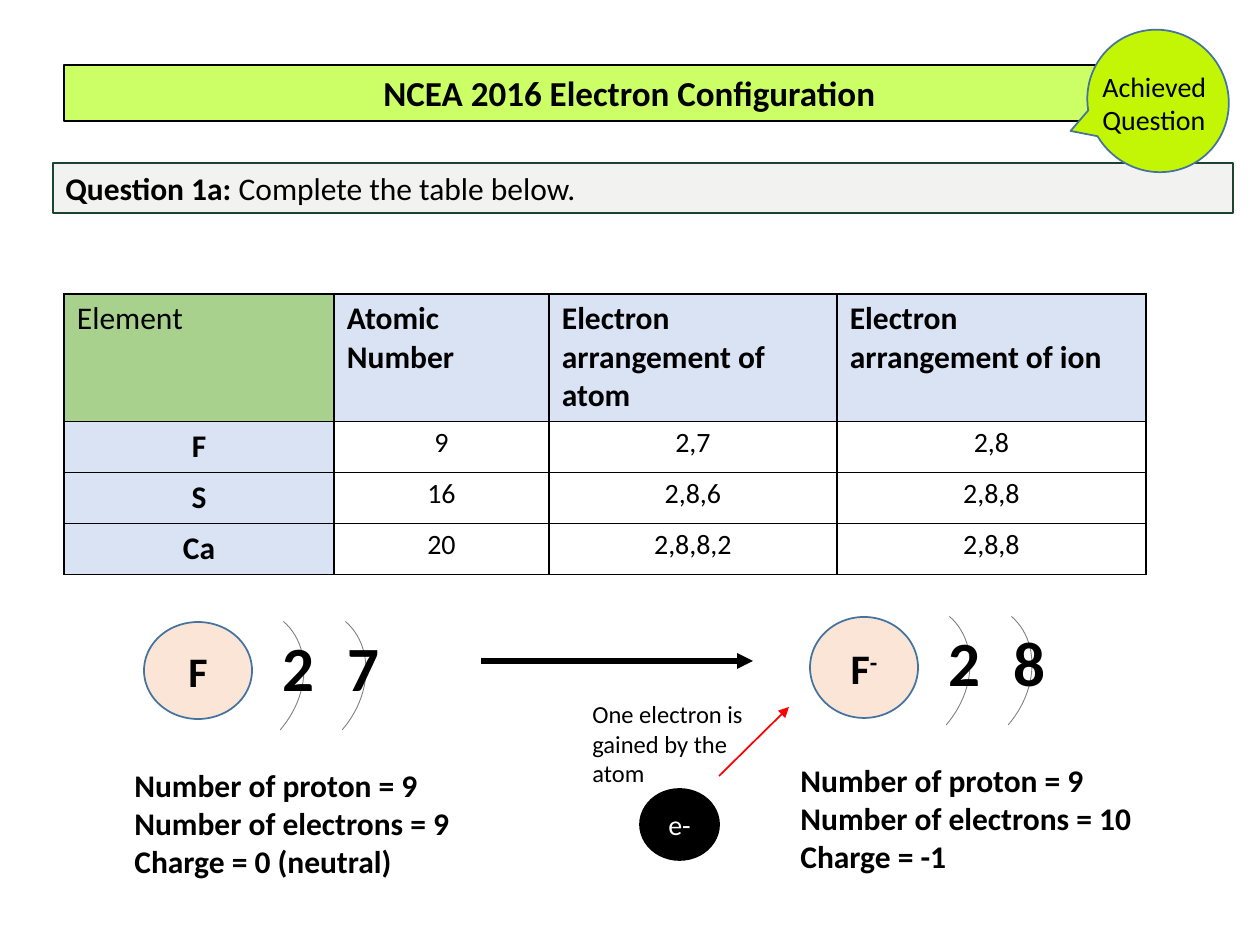
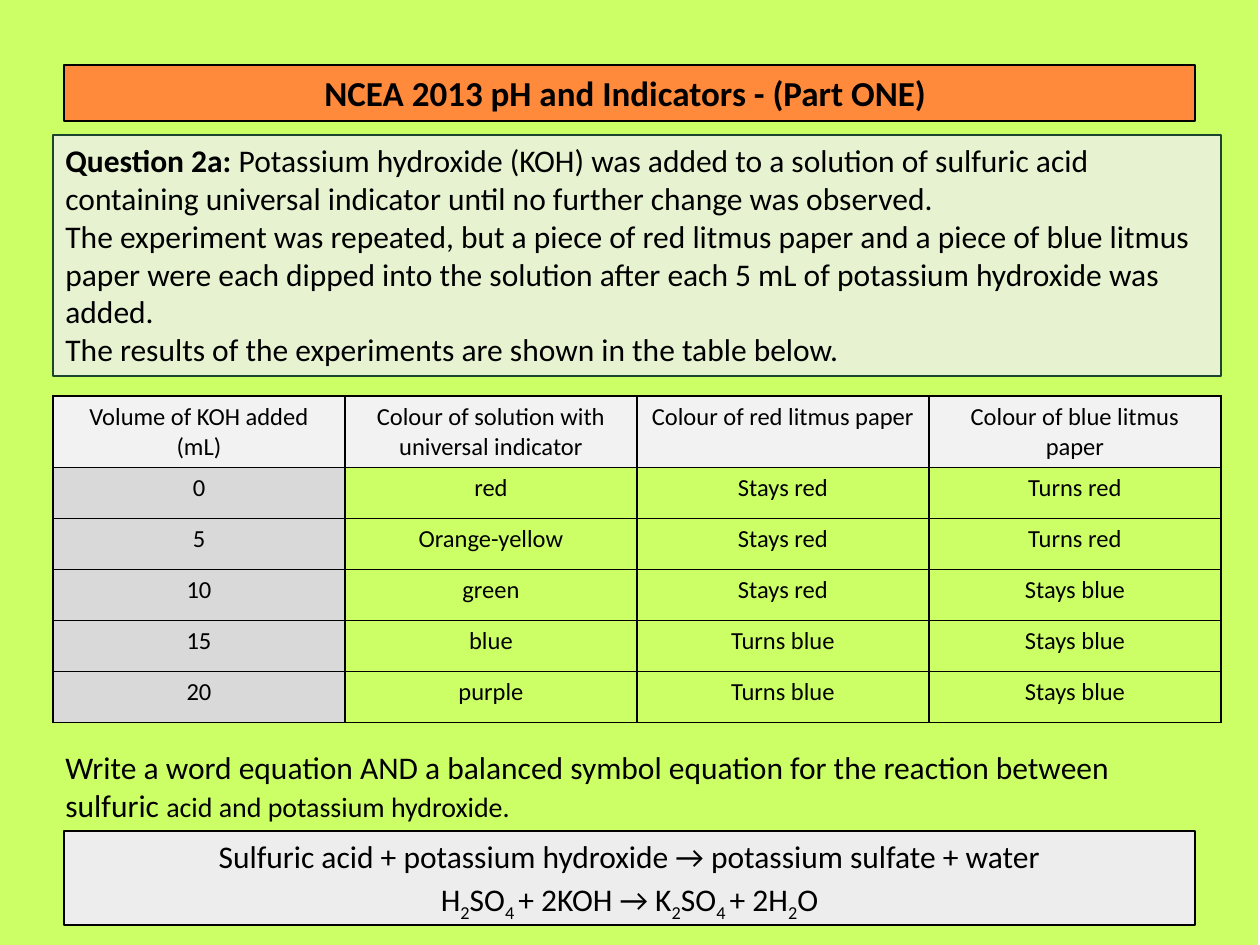
from pptx import Presentation
from pptx.dml.color import RGBColor
from pptx.enum.shapes import MSO_CONNECTOR, MSO_SHAPE
from pptx.enum.text import MSO_ANCHOR, PP_ALIGN
from pptx.oxml import parse_xml
from pptx.oxml.ns import nsdecls, qn
from pptx.util import Pt

PX = 914400 / 126
RECT, OVAL, ARC = MSO_SHAPE.RECTANGLE, MSO_SHAPE.OVAL, MSO_SHAPE.ARC
CALL = MSO_SHAPE.OVAL_CALLOUT
LEFT, MID = PP_ALIGN.LEFT, PP_ALIGN.CENTER
TOP, HALF = MSO_ANCHOR.TOP, MSO_ANCHOR.MIDDLE


class Theme:
    font = "Calibri"
    black, white, red = "000000", "FFFFFF", "FF0000"
    lime, orange, badge = "CCFF66", "FF8A3B", "C2F604"
    panel, edge, reply = "EFEFEE", "1B452F", "EDEDED"
    peach, rim, shell = "FBE5D6", "43739E", "808080"
    green, blue, pale, grey = "A9D18E", "DAE3F3", "F2F2F2", "D9D9D9"
    title, body, small, note = 20, 18, 16, 14
    atom, count = 24, 36


def write(frame, lines, size, bold=False, align=LEFT, ink=Theme.black, after=0):
    """Each line is a string or a list of (text, look) runs."""
    frame.word_wrap = True
    for i, line in enumerate(lines):
        para = frame.paragraphs[0] if i == 0 else frame.add_paragraph()
        para.alignment = align
        para.space_after = Pt(after)
        font = para.font
        font.name, font.size, font.bold = Theme.font, Pt(size), bold
        font.color.rgb = RGBColor.from_string(ink)
        for text, look in [(line, {})] if isinstance(line, str) else line:
            run = para.add_run()
            run.text = text
            for key, val in look.items():
                if key == "base":
                    run.font._element.set("baseline", str(val * 1000))
                else:
                    setattr(run.font, key, val)


def box(slide, kind, at, lines=(), size=Theme.body, fill=None, line=None,
        width=0.75, anchor=TOP, turn=0, **look):
    """Add a shape, or a text box when kind is None."""
    at = [round(n * PX) for n in at]
    if kind is None:
        shape = slide.shapes.add_textbox(*at)
    else:
        shape = slide.shapes.add_shape(kind, *at)
        shape.shadow.inherit = False
        shape.rotation = turn
        if fill:
            shape.fill.solid()
            shape.fill.fore_color.rgb = RGBColor.from_string(fill)
        else:
            shape.fill.background()
        if line:
            shape.line.color.rgb = RGBColor.from_string(line)
            shape.line.width = Pt(width)
        else:
            shape.line.fill.background()
    shape.text_frame.vertical_anchor = anchor
    write(shape.text_frame, lines, size, **look)
    return shape


deck = Presentation()
deck.slide_width, deck.slide_height = round(1260 * PX), round(945 * PX)
shells, acids = [deck.slides.add_slide(deck.slide_layouts[6]) for _ in range(2)]
box(acids, RECT, (0, 0, 1258, 945), fill=Theme.lime)

# Titles and question panels
strong = {"bold": True}
heads = [
    (shells, "NCEA 2016 Electron Configuration", Theme.lime, (53, 163, 1180, 50),
     [[("Question 1a: ", strong), ("Complete the table below.", {})]]),
    (acids, "NCEA 2013 pH and Indicators - (Part ONE) ", Theme.orange,
     (53, 135, 1168, 241),
     [[("Question 2a: ", strong),
       ("Potassium hydroxide (KOH) was added to a solution of sulfuric acid "
        "containing universal indicator until no further change was observed.", {})],
      "The experiment was repeated, but a piece of red litmus paper and a piece of "
      "blue litmus paper were each dipped into the solution after each 5 mL of "
      "potassium hydroxide was added.",
      "The results of the experiments are shown in the table below."]),
]
for slide, title, fill, at, ask in heads:
    box(slide, RECT, (64, 65, 1131, 56), [title], Theme.title, fill, Theme.black,
        bold=True, align=MID)
    panel = box(slide, RECT, at, ask, fill=Theme.panel, line=Theme.edge)
    tint = panel._element.spPr.find(qn("a:solidFill"))[0]
    tint.append(parse_xml(f'<a:alpha {nsdecls("a")} val="79000"/>'))

# Tables: look is fill, size, bold, align, side margin
plain = (None, Theme.note, False, MID, 13)
tables = [
    (shells, 64, 294, [270, 215, 288, 309], [126, 51, 51, 51],
     [["Element", "Atomic Number", "Electron arrangement of atom",
       "Electron arrangement of ion"],
      ["F", "9", "2,7", "2,8"],
      ["S", "16", "2,8,6", "2,8,8"],
      ["Ca", "20", "2,8,8,2", "2,8,8"]],
     {"corner": (Theme.green, Theme.body, False, LEFT, 13),
      "head": (Theme.blue, Theme.body, True, LEFT, 13),
      "side": (Theme.blue, Theme.body, True, MID, 13),
      "cell": (None, Theme.small, False, MID, 5)}),
    (acids, 53, 396, [292] * 4, [71] + [51] * 5,
     [["Volume of KOH added (mL)", "Colour of solution with universal indicator",
       "Colour of red litmus paper", "Colour of blue litmus paper"],
      ["0", "red", "Stays red", "Turns red"],
      ["5", "Orange-yellow", "Stays red", "Turns red"],
      ["10", "green", "Stays red", "Stays blue"],
      ["15", "blue", "Turns blue", "Stays blue"],
      ["20", "purple", "Turns blue", "Stays blue"]],
     {"corner": (Theme.pale,) + plain[1:], "head": (Theme.pale,) + plain[1:],
      "side": (Theme.grey,) + plain[1:], "cell": plain}),
]
for slide, left, top, cols, tall, rows, looks in tables:
    at = [round(n * PX) for n in (left, top, sum(cols), sum(tall))]
    grid = slide.shapes.add_table(len(rows), len(cols), *at).table
    grid.first_row = grid.horz_banding = False
    for col, wide in zip(grid.columns, cols):
        col.width = round(wide * PX)
    for row, high in zip(grid.rows, tall):
        row.height = round(high * PX)
    for r, row in enumerate(rows):
        for c, text in enumerate(row):
            part = ("head" if c else "corner") if r == 0 else ("cell" if c else "side")
            fill, size, bold, align, gap = looks[part]
            cell = grid.cell(r, c)
            cell.margin_left = cell.margin_right = round(gap * PX)
            cell.margin_top = cell.margin_bottom = round(min(gap, 6) * PX)
            write(cell.text_frame, [text], size, bold, align)
            for side in "LRTB":
                cell._tc.get_or_add_tcPr().append(parse_xml(
                    f'<a:ln{side} {nsdecls("a")} w="12700"><a:solidFill>'
                    f'<a:srgbClr val="{Theme.black}"/></a:solidFill></a:ln{side}>'))
            if fill:
                cell.fill.solid()
                cell.fill.fore_color.rgb = RGBColor.from_string(fill)
            else:
                cell.fill.background()

# Badge
box(shells, CALL, (1086, 31, 144, 140), fill=Theme.badge, line=Theme.rim,
    width=1, turn=52.1)
box(shells, None, (1090, 63, 159, 81), ["Achieved", "Question"], Theme.small)

# Atom and ion
atoms = [
    (144, 622, 97, "F", "27",
     ["Number of proton = 9", "Number of electrons = 9", "Charge = 0 (neutral)"]),
    (810, 617, 101, [("F", {}), ("-", {"base": 30})], "28",
     ["Number of proton = 9", "Number of electrons = 10", "Charge = -1"]),
]
for x, y, high, name, counts, facts in atoms:
    box(shells, OVAL, (x, y, 108, high), [name], Theme.atom, Theme.peach, Theme.rim,
        1, HALF, bold=True, align=MID)
    for i, count in enumerate(counts):
        box(shells, ARC, (x + 16 + 62 * i, y - 21, 137, 168), line=Theme.shell,
            width=0.5, turn=40.9)
        box(shells, None, (x + 126 + 65 * i, y, 63, 89), [count], Theme.count,
            bold=True)
    box(shells, None, (x - 22, y + 138, 358, 127), facts, bold=True)

# Electron gained
box(shells, OVAL, (640, 789, 79, 71), ["e-"], Theme.small, Theme.black, Theme.black,
    1, HALF, align=MID, ink=Theme.white)
box(shells, None, (580, 693, 179, 102), ["One electron is gained by the atom"],
    Theme.note)
for ends, ink, width in [((719, 776, 789, 707), Theme.red, 1),
                         ((481, 661, 753, 661), Theme.black, 3)]:
    arrow = shells.shapes.add_connector(MSO_CONNECTOR.STRAIGHT,
                                        *[round(n * PX) for n in ends])
    arrow.line.color.rgb = RGBColor.from_string(ink)
    arrow.line.width = Pt(width)
    prop = arrow._element.spPr
    prop.find(qn("a:ln")).append(
        parse_xml(f'<a:tailEnd {nsdecls("a")} type="triangle"/>'))
    prop.append(parse_xml(f'<a:effectLst {nsdecls("a")}/>'))

# Equation task and answer
box(acids, None, (53, 742, 1168, 89),
    [[("Write a word equation AND a balanced symbol equation for the reaction "
       "between sulfuric ", {}),
      ("acid and potassium hydroxide.", {"size": Pt(Theme.small)})]])
bits = "H_2_SO_4 _+ 2KOH → K_2_SO_4 _+ 2H_2_O".split("_")
symbols = [(bit, {"base": -25} if i % 2 else {}) for i, bit in enumerate(bits)]
box(acids, RECT, (64, 831, 1131, 94),
    ["Sulfuric acid + potassium hydroxide → potassium sulfate + water", symbols],
    fill=Theme.reply, line=Theme.black, align=MID, after=3)

deck.save("out.pptx")
